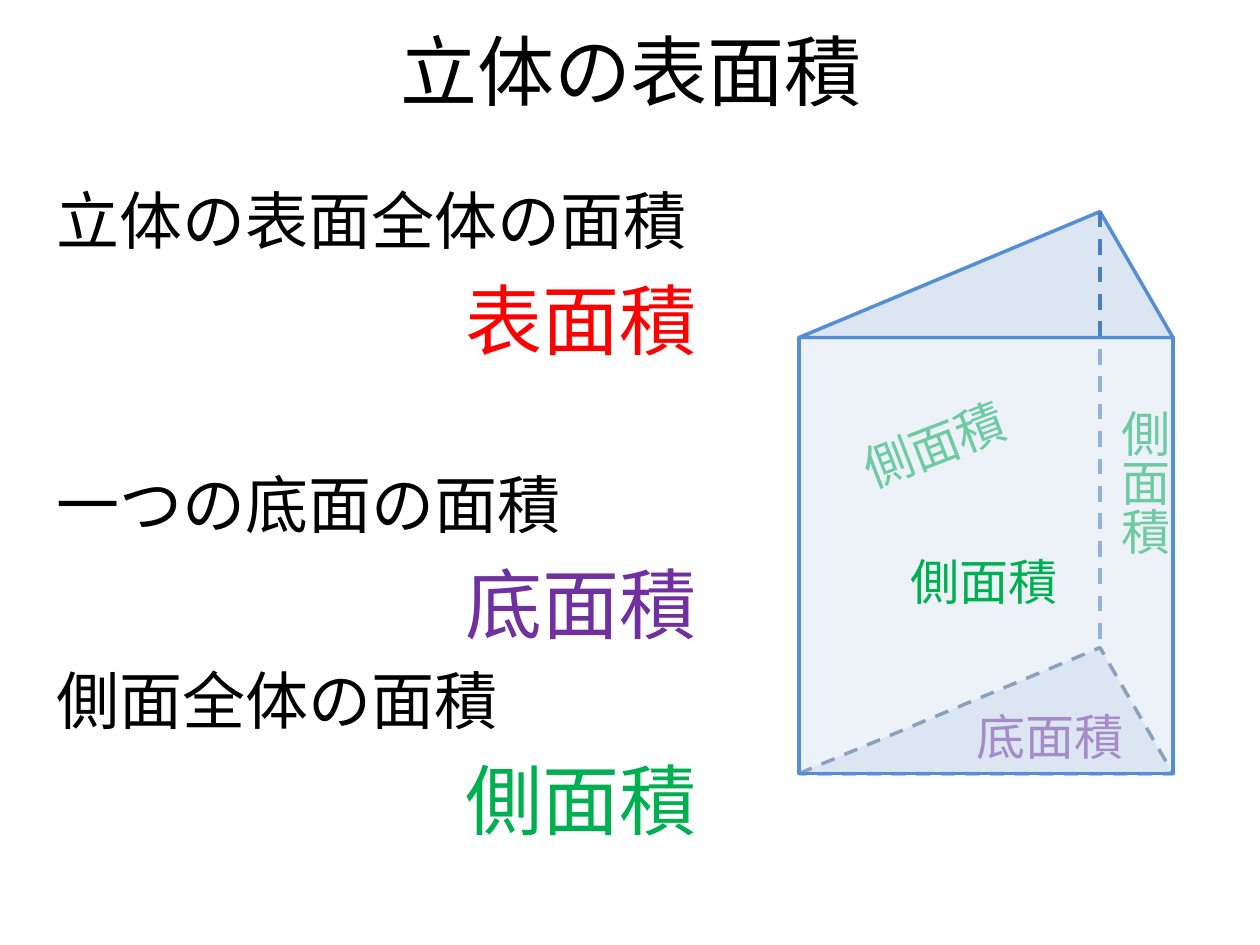
from dataclasses import dataclass
from typing import Optional

from lxml import etree
from pptx import Presentation
from pptx import util as u
from pptx.dml.color import RGBColor
from pptx.enum import dml, shapes, text
from pptx.oxml import ns

FONT = "Calibri"
BLACK, RED, PURPLE, GREEN = "000000", "FF0000", "7030A0", "00B050"
FACE, EDGE, HIDDEN_EDGE, HIDDEN_HEIGHT = "DCE6F2", "558ED5", "3A5F8C", "4B7EBC"
LEFT, TOP, WIDTH = 6.34, 1.68, 2.97
DEPTH, HEIGHT = 1.0, 3.46
APEX = 0.805


@dataclass
class Definition:
    description: str
    term: str
    color: str
    space_before: Optional[float] = None


@dataclass
class Label:
    content: str
    left: float
    top: float
    color: str
    width: float = 1.38
    height: float = 0.57
    rotation: float = 0
    vertical: bool = False


@dataclass
class Face:
    preset: shapes.MSO_SHAPE
    top: float
    height: float
    line_color: str
    dashed: bool = False
    opacity: Optional[int] = None


DEFINITIONS = [
    Definition("立体の表面全体の面積", "表面積", RED),
    Definition("一つの底面の面積", "底面積", PURPLE, space_before=57.5),
    Definition("側面全体の面積", "側面積", GREEN),
]
RIGHT_LABEL = Label("側面積", 8.69, 3.15, GREEN, width=0.67, height=1.28, vertical=True)
BASE_LABEL = Label("底面積", 7.65, 5.56, PURPLE)
BACK_LABEL = Label("側面積", 6.73, 3.24, GREEN, rotation=338.9)
FRONT_LABEL = Label("側面積", 7.13, 4.33, GREEN)
TOP_FACE = Face(shapes.MSO_SHAPE.ISOSCELES_TRIANGLE, TOP, DEPTH, EDGE)
BASE_FACE = Face(shapes.MSO_SHAPE.ISOSCELES_TRIANGLE, TOP + HEIGHT, DEPTH, HIDDEN_EDGE, dashed=True)
FRONT_FACE = Face(shapes.MSO_SHAPE.RECTANGLE, TOP + DEPTH, HEIGHT, EDGE, opacity=50)


def set_color(color_owner, value: str) -> None:
    color_owner.rgb = RGBColor.from_string(value)


def write(paragraph, content: str, *, size: float, color: str = BLACK,
          align=text.PP_ALIGN.LEFT, space_before: Optional[float] = None) -> None:
    run = paragraph.add_run()
    run.text = content
    run.font.name = FONT
    run.font.size = u.Pt(size)
    set_color(run.font.color, color)
    paragraph.alignment = align
    if space_before is not None:
        paragraph.space_before = u.Pt(space_before)


def place(shape, left: float, top: float, width: float, height: float) -> None:
    shape.left, shape.top = u.Inches(left), u.Inches(top)
    shape.width, shape.height = u.Inches(width), u.Inches(height)


def style_line(line, color: str, width: float, dashed: bool) -> None:
    set_color(line.color, color)
    line.width = u.Pt(width)
    if dashed:
        line.dash_style = dml.MSO_LINE.DASH


def remove_bullet(paragraph) -> None:
    properties = paragraph._p.get_or_add_pPr()
    properties.set("marL", "0")
    properties.set("indent", "0")
    etree.SubElement(properties, ns.qn("a:buNone"))


def write_definitions(frame) -> None:
    frame.auto_size = text.MSO_AUTO_SIZE.NONE
    paragraph = frame.paragraphs[0]
    for index, definition in enumerate(DEFINITIONS):
        if index:
            paragraph = frame.add_paragraph()
        write(paragraph, definition.description, size=36, space_before=definition.space_before)
        remove_bullet(paragraph)
        paragraph = frame.add_paragraph()
        write(paragraph, definition.term, size=44, color=definition.color,
              align=text.PP_ALIGN.RIGHT)
        remove_bullet(paragraph)


def draw_label(slide, label: Label) -> None:
    shape = slide.shapes.add_textbox(u.Inches(label.left), u.Inches(label.top),
                                     u.Inches(label.width), u.Inches(label.height))
    shape.rotation = label.rotation
    frame = shape.text_frame
    frame.word_wrap = False
    frame.auto_size = text.MSO_AUTO_SIZE.SHAPE_TO_FIT_TEXT
    if label.vertical:
        frame._txBody.bodyPr.set("vert", "eaVert")
    write(frame.paragraphs[0], label.content, size=28, color=label.color)


def draw_face(slide, face: Face) -> None:
    shape = slide.shapes.add_shape(face.preset, u.Inches(LEFT), u.Inches(face.top),
                                   u.Inches(WIDTH), u.Inches(face.height))
    shape.shadow.inherit = False
    if face.preset == shapes.MSO_SHAPE.ISOSCELES_TRIANGLE:
        shape.adjustments[0] = APEX
    shape.fill.solid()
    set_color(shape.fill.fore_color, FACE)
    if face.opacity is not None:
        color = shape._element.spPr.find(ns.qn("a:solidFill"))[0]
        etree.SubElement(color, ns.qn("a:alpha"), val=str(face.opacity * 1000))
    style_line(shape.line, face.line_color, 2, face.dashed)


def draw_hidden_height(slide) -> None:
    x = u.Inches(LEFT + APEX * WIDTH)
    connector = slide.shapes.add_connector(shapes.MSO_CONNECTOR.STRAIGHT, x, u.Inches(TOP),
                                           x, u.Inches(TOP + HEIGHT))
    style_line(connector.line, HIDDEN_HEIGHT, 2.25, True)
    etree.SubElement(connector._element.spPr, ns.qn("a:effectLst"))


def main() -> None:
    presentation = Presentation()
    presentation.slide_width, presentation.slide_height = u.Inches(10), u.Inches(7.5)
    slide = presentation.slides.add_slide(presentation.slide_layouts[1])

    draw_label(slide, RIGHT_LABEL)
    title, body = slide.placeholders
    place(title, 0.51, 0.13, 9, 0.85)
    title.text_frame.auto_size = text.MSO_AUTO_SIZE.NONE
    title.text_frame.vertical_anchor = text.MSO_ANCHOR.MIDDLE
    write(title.text_frame.paragraphs[0], "立体の表面積", size=44, align=text.PP_ALIGN.CENTER)
    place(body, 0.35, 1.39, 5.28, 5.15)
    write_definitions(body.text_frame)

    draw_face(slide, TOP_FACE)
    draw_face(slide, BASE_FACE)
    draw_hidden_height(slide)
    draw_label(slide, BASE_LABEL)
    draw_label(slide, BACK_LABEL)
    draw_face(slide, FRONT_FACE)
    draw_label(slide, FRONT_LABEL)
    presentation.save("out.pptx")


if __name__ == "__main__":
    main()
